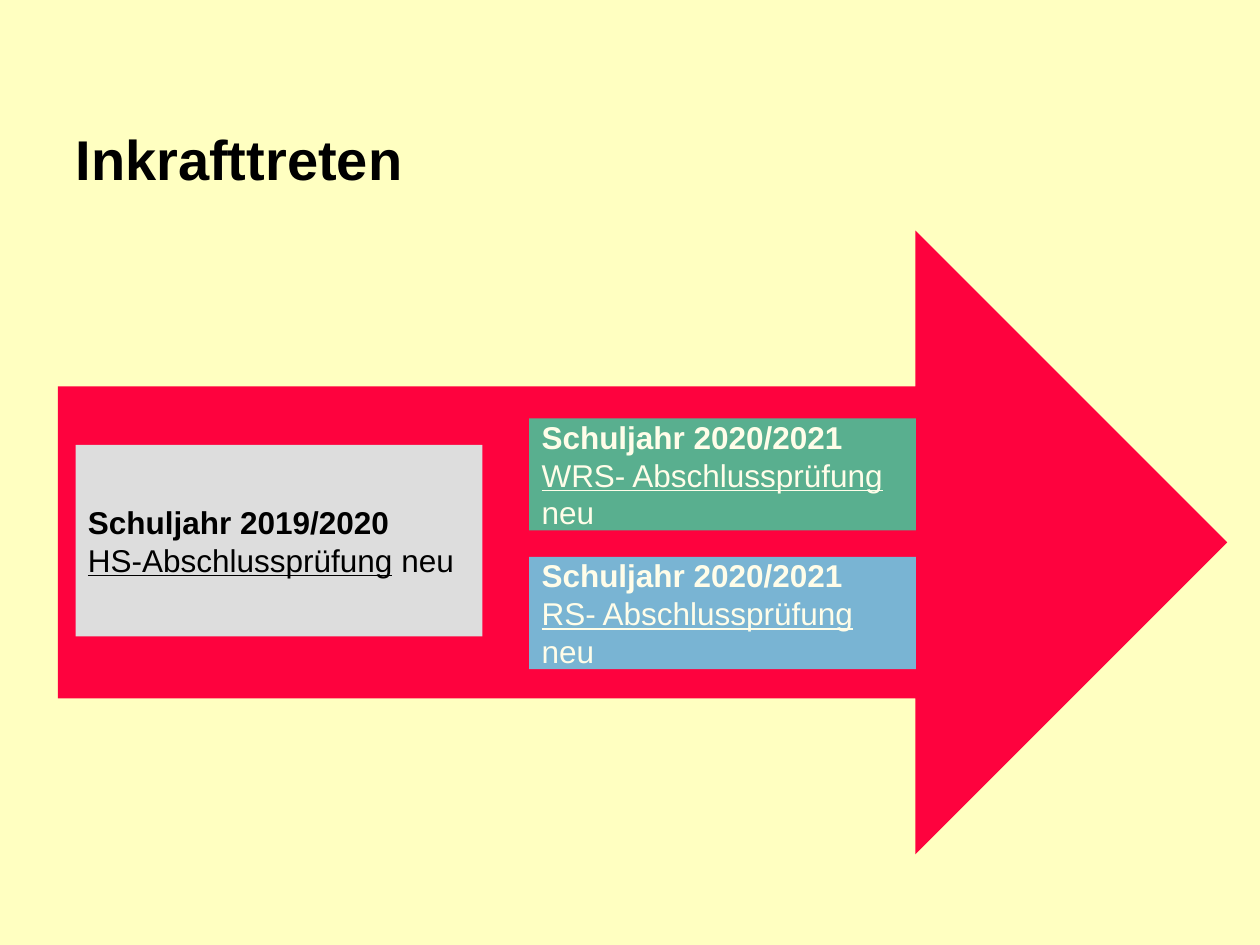
from dataclasses import dataclass

from pptx import Presentation
from pptx.dml.color import RGBColor
from pptx.enum.shapes import MSO_SHAPE
from pptx.enum.text import MSO_ANCHOR, PP_ALIGN
from pptx.util import Inches, Pt


@dataclass(frozen=True)
class Theme:
    font: str = "Arial"
    title_size: int = 32
    box_size: int = 18
    background: str = "FFFFC1"
    arrow: str = "FE023E"
    dark: str = "000000"
    light: str = "FFFDE9"
    gray: str = "DDDDDD"
    green: str = "59AF8F"
    blue: str = "79B4D3"


@dataclass(frozen=True)
class Area:
    left: float
    top: float
    width: float
    height: float

    def lengths(self) -> tuple:
        return tuple(Inches(value) for value in (self.left, self.top, self.width, self.height))


@dataclass(frozen=True)
class Milestone:
    area: Area
    year: str
    exam: str
    fill: str
    color: str


THEME = Theme()
TITLE_AREA = Area(0.5, 0.82, 9, 0.87)
ARROW_AREA = Area(0.46, 1.83, 9.28, 4.95)

# The second column holds two rows of equal height
COLUMN_LEFT, COLUMN_WIDTH = 4.2, 3.07
ROW_TOP, ROW_HEIGHT, ROW_STEP = 3.32, 0.89, 1.1


def row_area(row: int) -> Area:
    return Area(COLUMN_LEFT, ROW_TOP + row * ROW_STEP, COLUMN_WIDTH, ROW_HEIGHT)


MILESTONES = (
    Milestone(Area(0.6, 3.53, 3.23, 1.52), "2019/2020", "HS-Abschlussprüfung",
              THEME.gray, THEME.dark),
    Milestone(row_area(1), "2020/2021", "RS- Abschlussprüfung", THEME.blue, THEME.light),
    Milestone(row_area(0), "2020/2021", "WRS- Abschlussprüfung", THEME.green, THEME.light),
)


def format_paragraph(paragraph, size: int, color: str, bold: bool) -> None:
    paragraph.alignment = PP_ALIGN.LEFT
    font = paragraph.font
    font.name, font.size, font.bold = THEME.font, Pt(size), bold
    font.color.rgb = RGBColor.from_string(color)


def add_filled_shape(slide, kind: MSO_SHAPE, area: Area, fill: str):
    shape = slide.shapes.add_shape(kind, *area.lengths())
    shape.shadow.inherit = False
    shape.fill.solid()
    shape.fill.fore_color.rgb = RGBColor.from_string(fill)
    shape.line.fill.background()
    return shape


def add_title(slide, text: str) -> None:
    title = slide.shapes.title
    title.left, title.top, title.width, title.height = TITLE_AREA.lengths()
    title.text_frame.text = text
    title.text_frame.vertical_anchor = MSO_ANCHOR.MIDDLE
    format_paragraph(title.text_frame.paragraphs[0], THEME.title_size, THEME.dark, True)


def add_milestone(slide, milestone: Milestone) -> None:
    shape = add_filled_shape(slide, MSO_SHAPE.RECTANGLE, milestone.area, milestone.fill)
    frame = shape.text_frame
    frame.word_wrap = True
    frame.vertical_anchor = MSO_ANCHOR.MIDDLE

    heading = frame.paragraphs[0]
    heading.text = f"Schuljahr {milestone.year}"
    format_paragraph(heading, THEME.box_size, milestone.color, True)

    detail = frame.add_paragraph()
    format_paragraph(detail, THEME.box_size, milestone.color, False)
    exam = detail.add_run()
    exam.text = milestone.exam
    exam.font.underline = True
    detail.add_run().text = " neu"


def main() -> None:
    presentation = Presentation()
    presentation.slide_width, presentation.slide_height = Inches(10), Inches(7.5)
    slide = presentation.slides.add_slide(presentation.slide_layouts[5])

    # Background and title
    slide.background.fill.solid()
    slide.background.fill.fore_color.rgb = RGBColor.from_string(THEME.background)
    add_title(slide, "Inkrafttreten")

    # Timeline arrow with its milestones
    add_filled_shape(slide, MSO_SHAPE.RIGHT_ARROW, ARROW_AREA, THEME.arrow)
    for milestone in MILESTONES:
        add_milestone(slide, milestone)

    presentation.save("out.pptx")


if __name__ == "__main__":
    main()
